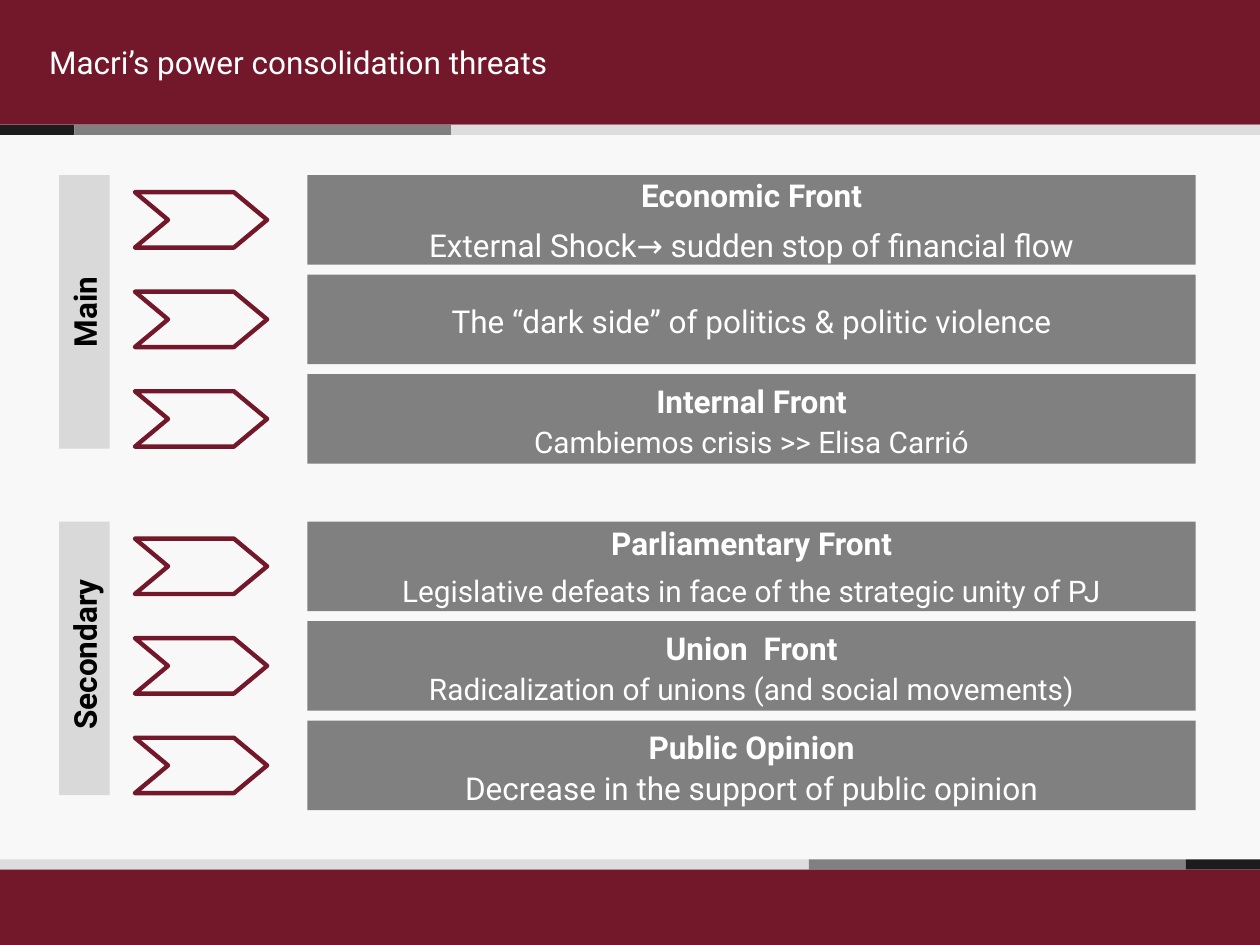
from pptx import Presentation
from pptx.dml.color import RGBColor
from pptx.enum.shapes import MSO_SHAPE as Shape
from pptx.enum.text import MSO_ANCHOR, MSO_AUTO_SIZE, PP_ALIGN
from pptx.util import Inches, Pt

MAROON = RGBColor(0x73, 0x17, 0x2B)
BLACK = RGBColor(0, 0, 0)
CHARCOAL = RGBColor(0x1C, 0x1C, 0x1C)
GRAY = RGBColor(0x80, 0x80, 0x80)
SILVER = RGBColor(0xDD, 0xDD, 0xDD)
LABEL_GRAY = RGBColor(0xD9, 0xD9, 0xD9)
OFF_WHITE = RGBColor(0xF8, 0xF8, 0xF8)
WHITE = RGBColor(0xFF, 0xFF, 0xFF)

TITLE = "Macri’s power consolidation threats"
STRIPES = [(0.59, CHARCOAL), (2.99, GRAY), (6.42, SILVER)]

# Each line is (text, size, bold, line spacing).
GROUPS = [
    ("Main", 1.39, [
        [("Economic Front", 18, True, 1.0),
         ("External Shock→ sudden stop of financial flow", 18, False, 1.3)],
        [("The “dark side” of politics & politic violence", 18, False, 1.1)],
        [("Internal Front", 18, True, 1.1),
         ("Cambiemos crisis >> Elisa Carrió", 17, False, 1.1)],
    ]),
    (" Secondary", 4.14, [
        [("Parliamentary Front", 18, True, 1.0),
         ("Legislative defeats in face of the strategic unity of PJ", 17, False, 1.3)],
        [("Union  Front", 18, True, 1.1),
         ("Radicalization of unions (and social movements)", 17, False, 1.1)],
        [("Public Opinion", 18, True, 1.1),
         ("Decrease in the support of public opinion", 18, False, 1.1)],
    ]),
]

SLIDE_WIDTH, SLIDE_HEIGHT = 10, 7.5
HEADER_HEIGHT, FOOTER_TOP, STRIPE_HEIGHT = 0.99, 6.9, 0.08
BOX_LEFT, BOX_WIDTH, BOX_HEIGHT, ROW_PITCH = 2.44, 7.05, 0.71, 0.79
ARROW_LEFT, ARROW_WIDTH, ARROW_HEIGHT = 1.07, 1.05, 0.44
LABEL_CENTER, LABEL_LENGTH, LABEL_THICKNESS = 0.67, 2.17, 0.4


def add_shape(slide, kind, left, top, width, height, fill=None):
    shape = slide.shapes.add_shape(kind, *map(Inches, (left, top, width, height)))
    shape.shadow.inherit = False
    shape.line.fill.background()
    if fill is None:
        shape.fill.background()
    else:
        shape.fill.solid()
        shape.fill.fore_color.rgb = fill
    return shape


def write_lines(shape, lines, color, align=PP_ALIGN.CENTER):
    frame = shape.text_frame
    frame.word_wrap = True
    frame.auto_size = MSO_AUTO_SIZE.NONE
    frame.vertical_anchor = MSO_ANCHOR.MIDDLE
    for index, (text, size, bold, spacing) in enumerate(lines):
        paragraph = frame.add_paragraph() if index else frame.paragraphs[0]
        paragraph.alignment = align
        paragraph.line_spacing = spacing
        run = paragraph.add_run()
        run.text = text
        for name, value in {"name": "Roboto", "size": Pt(size), "bold": bold}.items():
            setattr(run.font, name, value)
        run.font.color.rgb = color


def add_title(slide):
    title = slide.shapes.title
    frame = {"left": 0, "top": 0, "width": SLIDE_WIDTH, "height": HEADER_HEIGHT}
    for name, value in frame.items():
        setattr(title, name, Inches(value))
    title.fill.solid()
    title.fill.fore_color.rgb = MAROON
    title.text_frame.margin_left = Inches(0.39)
    write_lines(title, [(TITLE, 18, False, 1.0)], WHITE, PP_ALIGN.LEFT)


def add_bands(slide):
    add_shape(slide, Shape.RECTANGLE, 0, FOOTER_TOP, SLIDE_WIDTH,
              SLIDE_HEIGHT - FOOTER_TOP, MAROON)
    bands = [(HEADER_HEIGHT, STRIPES), (FOOTER_TOP - STRIPE_HEIGHT, STRIPES[::-1])]
    for top, stripes in bands:
        left = 0
        for width, color in stripes:
            add_shape(slide, Shape.RECTANGLE, left, top, width, STRIPE_HEIGHT, color)
            left += width


def add_group(slide, name, top, rows):
    label = add_shape(slide, Shape.RECTANGLE, LABEL_CENTER - LABEL_LENGTH / 2,
                      top + (LABEL_LENGTH - LABEL_THICKNESS) / 2,
                      LABEL_LENGTH, LABEL_THICKNESS, LABEL_GRAY)
    label.rotation = 270
    write_lines(label, [(name, 18, True, 1.0)], BLACK)
    for index, lines in enumerate(rows):
        row_top = top + index * ROW_PITCH
        box = add_shape(slide, Shape.RECTANGLE, BOX_LEFT, row_top,
                        BOX_WIDTH, BOX_HEIGHT, GRAY)
        write_lines(box, lines, WHITE)
        arrow = add_shape(slide, Shape.CHEVRON, ARROW_LEFT,
                          row_top + (BOX_HEIGHT - ARROW_HEIGHT) / 2,
                          ARROW_WIDTH, ARROW_HEIGHT)
        arrow.adjustments[0] = 0.6
        arrow.line.color.rgb = MAROON
        arrow.line.width = Pt(2.5)


def main():
    presentation = Presentation()
    presentation.slide_width = Inches(SLIDE_WIDTH)
    presentation.slide_height = Inches(SLIDE_HEIGHT)
    slide = presentation.slides.add_slide(presentation.slide_layouts[5])
    slide.background.fill.solid()
    slide.background.fill.fore_color.rgb = OFF_WHITE
    add_title(slide)
    add_bands(slide)
    for name, top, rows in GROUPS:
        add_group(slide, name, top, rows)
    presentation.save("out.pptx")


if __name__ == "__main__":
    main()
